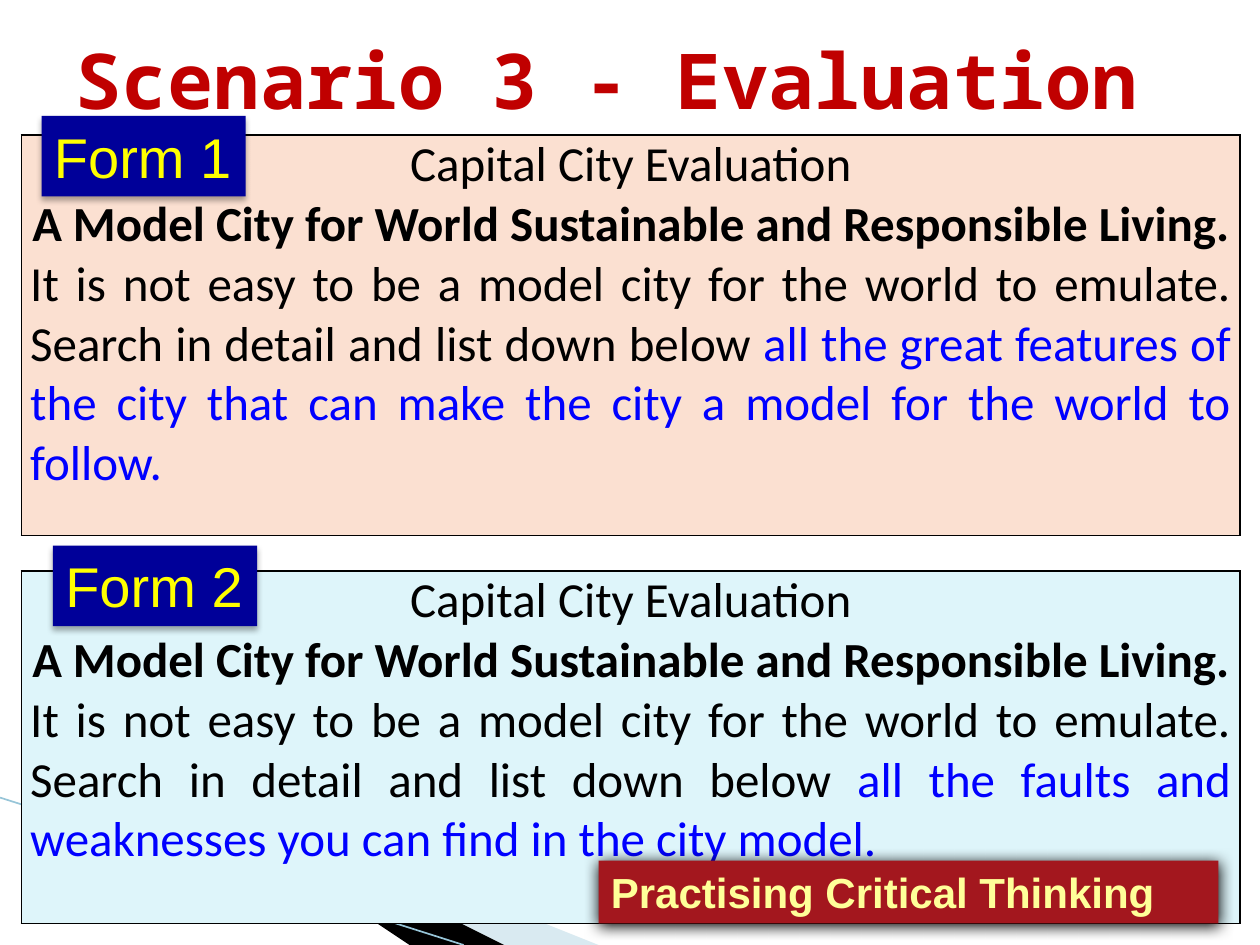
from lxml import etree
from pptx import Presentation
from pptx import util as u
from pptx.dml.color import RGBColor
from pptx.enum import shapes, text
from pptx.oxml import ns

INK, BLUE = "000000", "0000FF"
ALIGN = text.PP_ALIGN


def color(code):
    return RGBColor.from_string(code)


def apply(target, values):
    for name, value in values.items():
        setattr(target, name, value)


def node(parent, tag, **attrs):
    item = etree.SubElement(parent, ns.qn(tag))
    for name, value in attrs.items():
        item.set(name, str(value))
    return item


class Deck:
    body = dict(name="Calibri", size=u.Pt(28))
    label = dict(name="Arial", size=u.Pt(32))
    strong = dict(name="Arial", size=u.Pt(24), bold=True)
    head = dict(name="Noto Sans Mono", size=u.Pt(44), bold=True)

    def __init__(self, wide, high):
        self.file = Presentation()
        apply(self.file, dict(slide_width=u.Inches(wide), slide_height=u.Inches(high)))
        self.slide = self.file.slides.add_slide(self.file.slide_layouts[6])
        self.items = self.slide.shapes

    def put(self, para, words, style, code, **extra):
        run = para.add_run()
        run.text = words
        apply(run.font, {**style, **extra})
        run.font.color.rgb = color(code)

    def paint(self, shape, code):
        shape.shadow.inherit = False
        shape.line.fill.background()
        shape.fill.solid()
        shape.fill.fore_color.rgb = color(code)

    def title(self, box, words):
        frame = self.items.add_textbox(*map(u.Inches, box)).text_frame
        apply(frame, dict(word_wrap=True, vertical_anchor=text.MSO_ANCHOR.MIDDLE))
        self.put(frame.paragraphs[0], words, self.head, "C00000")

    def wedge(self, points, code, alpha=100):
        pen = self.items.build_freeform(*points[0], scale=u.Inches(1))
        pen.add_line_segments(points[1:], close=True)
        shape = pen.convert_to_shape()
        self.paint(shape, code)
        tint = shape._element.spPr.find(".//" + ns.qn("a:srgbClr"))
        node(tint, "a:alpha", val=alpha * 1000)

    def line(self, start, end, code, width):
        ends = map(u.Inches, (*start, *end))
        link = self.items.add_connector(shapes.MSO_CONNECTOR.STRAIGHT, *ends)
        link.line.color.rgb = color(code)
        link.line.width = u.Pt(width)
        node(link._element.spPr, "a:effectLst")

    def panel(self, top, high, code, task):
        box = map(u.Inches, (0.17, top, 9.67, high))
        table = self.items.add_table(1, 1, *box).table
        apply(table, dict(first_row=False, horz_banding=False))
        cell = table.cell(0, 0)
        apply(cell, dict(margin_left=u.Inches(0.07), margin_right=u.Inches(0.07),
                         margin_top=0, margin_bottom=0))
        props = cell._tc.get_or_add_tcPr()
        for side in ("a:lnL", "a:lnR", "a:lnT", "a:lnB"):
            edge = node(props, side, w=u.Pt(1))
            node(node(edge, "a:solidFill"), "a:srgbClr", val=INK)
        cell.fill.solid()
        cell.fill.fore_color.rgb = color(code)

        frame = cell.text_frame
        lead, motto, brief = frame.paragraphs[0], frame.add_paragraph(), frame.add_paragraph()
        lead.alignment = motto.alignment = ALIGN.CENTER
        brief.alignment = ALIGN.JUSTIFY
        self.put(lead, "Capital City Evaluation", self.body, INK)
        self.put(motto, "A Model City for World Sustainable and Responsible Living.",
                 self.body, INK, bold=True)
        self.put(brief, "It is not easy to be a model city for the world to emulate. "
                 "Search in detail and list down below ", self.body, INK)
        self.put(brief, task, self.body, BLUE)

    def badge(self, box, words, style, fill, ink, shade, wrap=False):
        shape = self.items.add_shape(shapes.MSO_SHAPE.RECTANGLE, *map(u.Inches, box))
        self.paint(shape, fill)
        blur, gap, alpha = shade
        effects = shape._element.spPr.find(ns.qn("a:effectLst"))
        cast = node(effects, "a:outerShdw", blurRad=u.Pt(blur), dist=u.Pt(gap),
                    dir=90 * 60000, rotWithShape=0)
        node(node(cast, "a:srgbClr", val=INK), "a:alpha", val=alpha * 1000)
        frame = shape.text_frame
        apply(frame, dict(word_wrap=wrap, vertical_anchor=text.MSO_ANCHOR.TOP,
                          auto_size=text.MSO_AUTO_SIZE.SHAPE_TO_FIT_TEXT))
        para = frame.paragraphs[0]
        para.alignment = ALIGN.LEFT
        self.put(para, words, style, ink)


def main():
    deck = Deck(10, 7.5)
    deck.wedge([(0.55, 6.5), (5.95, 7.5), (4.56, 7.5)], "A0CBDC", 40)
    deck.wedge([(0.53, 6.49), (4.57, 7.5), (3.72, 7.5)], INK)
    deck.line((0, 6.33), (3.68, 7.5), "97C5D8", 0.95)
    deck.title((0.5, 0, 9, 1.25), "Scenario 3 - Evaluation")

    deck.panel(1.07, 3.18, "FBE0D1", "all the great features of the city that can "
               "make the city a model for the world to follow.")
    deck.panel(4.53, 2.8, "DEF5FA",
               "all the faults and weaknesses you can find in the city model.")

    for left, top, words in ((0.33, 0.92, "Form 1"), (0.42, 4.33, "Form 2")):
        deck.badge((left, top, 1.62, 0.64), words, deck.label,
                   "000099", "FFFF00", (3.5, 2.2, 32))
    deck.badge((4.75, 6.83, 4.92, 0.5), "Practising Critical Thinking", deck.strong,
               "A3171E", "FFFF99", (8.5, 1, 100), wrap=True)
    deck.file.save("out.pptx")


if __name__ == "__main__":
    main()
